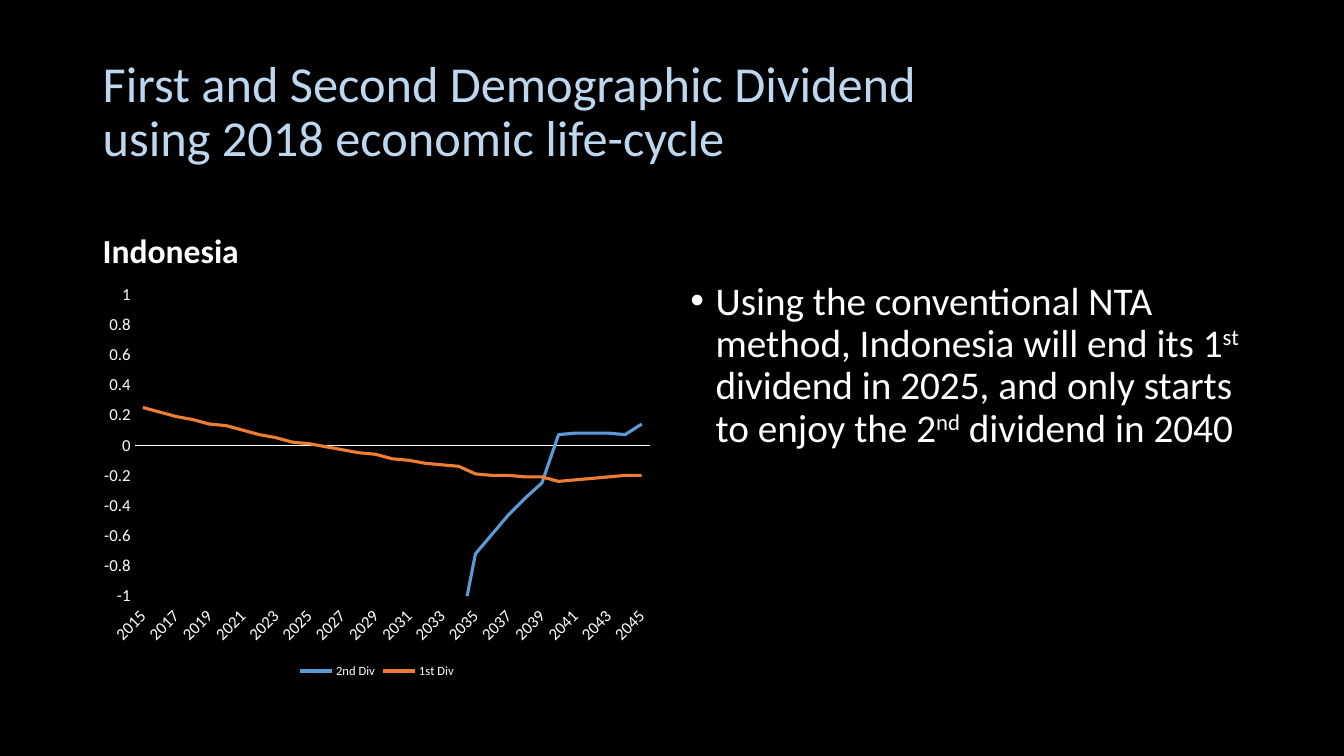
from dataclasses import dataclass

from lxml.etree import SubElement
from pptx import Presentation
from pptx.chart.data import CategoryChartData as ChartData
from pptx.dml.color import RGBColor
from pptx.enum.chart import XL_CHART_TYPE as Kind
from pptx.enum.chart import XL_LEGEND_POSITION as Place
from pptx.enum.chart import XL_TICK_LABEL_POSITION as Label
from pptx.enum.chart import XL_TICK_MARK as Tick
from pptx.enum.text import MSO_ANCHOR as Anchor
from pptx.oxml.ns import qn
from pptx.slide import Slide
from pptx.text.text import Font
from pptx.util import Inches, Pt

WHITE = "FFFFFF"
FACE = "Calibri"


@dataclass
class Block:
    box: tuple[float, float, float, float]
    texts: list[str]
    size: int
    color: str = WHITE
    bold: bool = False
    anchor: Anchor = Anchor.TOP
    bullet: bool = False


@dataclass
class Trend:
    name: str
    color: str
    vals: list[float]


BLOCKS = [
    Block((0.92, 0.4, 11.5, 1.45),
          ["First and Second Demographic Dividend\vusing 2018 economic life-cycle"],
          36, "BDD7EE", anchor=Anchor.MIDDLE),
    Block((0.92, 1.84, 5.64, 0.9), ["Indonesia"], 24, bold=True, anchor=Anchor.BOTTOM),
    Block((6.75, 2.74, 5.67, 4.03),
          ["Using the conventional NTA method, Indonesia will end its 1", "st",
           " dividend in 2025, and only starts to enjoy the 2", "nd",
           " dividend in 2040"], 28, bullet=True),
]

TRENDS = [
    Trend("2nd Div", "5B9BD5", [
        -1.74, -1.83, -1.91, -1.94, -1.95, -2.01, -2, -2, -2.02, -2.04, -2.17,
        -2.18, -2.18, -2.14, -2.08, -1.87, -1.74, -1.59, -1.43, -1.28, -0.72,
        -0.59, -0.46, -0.35, -0.25, 0.07, 0.08, 0.08, 0.08, 0.07, 0.14]),
    Trend("1st Div", "ED7D31", [
        0.25, 0.22, 0.19, 0.17, 0.14, 0.13, 0.1, 0.07, 0.05, 0.02, 0.01,
        -0.01, -0.03, -0.05, -0.06, -0.09, -0.1, -0.12, -0.13, -0.14, -0.19,
        -0.2, -0.2, -0.21, -0.21, -0.24, -0.23, -0.22, -0.21, -0.2, -0.2]),
]


def paint(code: str) -> RGBColor:
    return RGBColor.from_string(code)


def style(font: Font, size: int, color: str = WHITE, bold: bool = False) -> None:
    font.name = FACE
    font.size = Pt(size)
    font.bold = bold
    font.color.rgb = paint(color)


def write(slide: Slide, block: Block) -> None:
    frame = slide.shapes.add_textbox(*map(Inches, block.box)).text_frame
    frame.word_wrap = True
    frame.vertical_anchor = block.anchor
    para = frame.paragraphs[0]
    para.line_spacing = 0.9
    if block.bullet:
        props = para._p.get_or_add_pPr()
        props.set("marL", str(Inches(0.25)))
        props.set("indent", str(Inches(-0.25)))
        SubElement(props, qn("a:buFont"), typeface="Arial")
        SubElement(props, qn("a:buChar"), char="•")
    if len(block.texts) == 1:
        para.text = block.texts[0]
    else:
        for spot, text in enumerate(block.texts):
            run = para.add_run()
            run.text = text
            if spot % 2:
                run._r.get_or_add_rPr().set("baseline", "30000")
    style(para.font, block.size, block.color, block.bold)


def plot(slide: Slide, trends: list[Trend]) -> None:
    data = ChartData()
    data.categories = [str(year) for year in range(2015, 2046)]
    for trend in trends:
        data.add_series(trend.name, trend.vals)
    box = map(Inches, (0.92, 2.74, 5.64, 4.03))
    chart = slide.shapes.add_chart(Kind.LINE, *box, data).chart
    style(chart.font, 10)
    chart.has_title = False
    chart.has_legend = True
    chart.legend.position = Place.BOTTOM
    chart.legend.include_in_layout = False
    style(chart.legend.font, 9)

    years, scale = chart.category_axis, chart.value_axis
    for axis in (years, scale):
        axis.major_tick_mark = axis.minor_tick_mark = Tick.NONE
        axis.has_major_gridlines = False
        style(axis.tick_labels.font, 12)
    years.tick_label_position = Label.LOW
    years.format.line.color.rgb = paint(WHITE)
    years.format.line.width = Pt(0.75)
    years._element.find(qn("c:txPr")).find(qn("a:bodyPr")).set("rot", "-2700000")
    scale.minimum_scale, scale.maximum_scale = -1, 1
    scale.major_unit = 0.2
    scale.format.line.fill.background()

    chart.plots[0].vary_by_categories = False
    for series, trend in zip(chart.plots[0].series, trends):
        series.smooth = False
        series.format.line.color.rgb = paint(trend.color)
        series.format.line.width = Pt(2.25)


def main() -> None:
    deck = Presentation()
    deck.slide_width, deck.slide_height = Inches(13.33), Inches(7.5)
    slide = deck.slides.add_slide(deck.slide_layouts[6])
    fill = slide.background.fill
    fill.solid()
    fill.fore_color.rgb = paint("000000")
    for block in BLOCKS:
        write(slide, block)
    plot(slide, TRENDS)
    deck.save("out.pptx")


if __name__ == "__main__":
    main()
